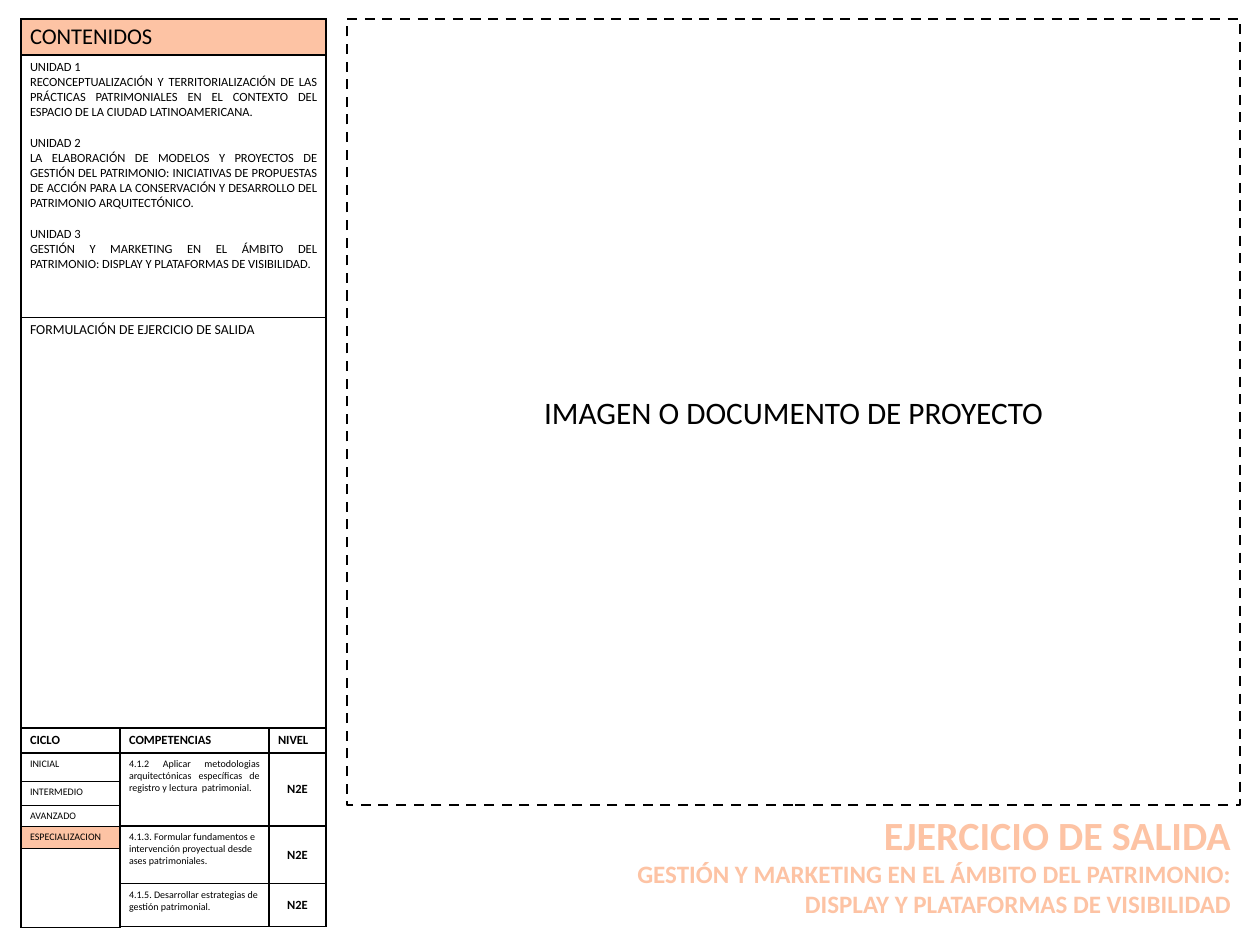
from dataclasses import dataclass

from lxml import etree
from pptx import Presentation
from pptx import util as u
from pptx.dml.color import RGBColor
from pptx.enum import dml, shapes, text
from pptx.oxml import ns

PX = 914400 // 90
INK, PEACH = "000000", "FDC3A4"
LEFT, MID, RIGHT, EVEN = (text.PP_ALIGN.LEFT, text.PP_ALIGN.CENTER,
                          text.PP_ALIGN.RIGHT, text.PP_ALIGN.JUSTIFY)
COLS = [99, 149, 57]
ROWS = [36, 262, 411, 25, 28, 24, 21, 22, 36, 43]


@dataclass
class Line:
    words: str
    size: int
    align: text.PP_ALIGN = EVEN
    bold: bool = False
    gap: float = 0
    ink: str = INK


@dataclass
class Box:
    row: int
    col: int
    lines: list[Line]
    down: int = 1
    wide: int = 1
    fill: str = ""
    middle: bool = False
    thin: str = ""


def px(n: int) -> u.Emu:
    return u.Emu(n * PX)


def rgb(code: str) -> RGBColor:
    return RGBColor.from_string(code)


def write(frame, lines: list[Line]) -> None:
    for i, line in enumerate(lines):
        par = frame.add_paragraph() if i else frame.paragraphs[0]
        par.alignment = line.align
        if line.gap:
            par.space_before = u.Pt(line.gap)
        run = par.add_run()
        run.text = line.words
        style = {"name": "Calibri", "size": u.Pt(line.size), "bold": line.bold}
        for key, value in style.items():
            setattr(run.font, key, value)
        run.font.color.rgb = rgb(line.ink)


def edge(cell, thin: str) -> None:
    """Draw four borders; the sides named in thin are half a point wide."""
    props = cell._tc.get_or_add_tcPr()
    for side in "LRTB":
        width = u.Pt(0.5 if side in thin else 1)
        rule = etree.SubElement(props, ns.qn(f"a:ln{side}"), w=str(width))
        solid = etree.SubElement(rule, ns.qn("a:solidFill"))
        etree.SubElement(solid, ns.qn("a:srgbClr"), val=INK)


def paint(cell, fill: str) -> None:
    if fill:
        cell.fill.solid()
        cell.fill.fore_color.rgb = rgb(fill)
    else:
        cell.fill.background()


def place(table, box: Box) -> None:
    head = table.cell(box.row, box.col)
    if box.down * box.wide > 1:
        head.merge(table.cell(box.row + box.down - 1, box.col + box.wide - 1))
    for row in range(box.row, box.row + box.down):
        for col in range(box.col, box.col + box.wide):
            cell = table.cell(row, col)
            edge(cell, box.thin)
            paint(cell, box.fill)
    if box.middle:
        head.vertical_anchor = text.MSO_ANCHOR.MIDDLE
    write(head.text_frame, box.lines)


UNITS = [
    "RECONCEPTUALIZACIÓN Y TERRITORIALIZACIÓN DE LAS PRÁCTICAS PATRIMONIALES "
    "EN EL CONTEXTO DEL ESPACIO DE LA CIUDAD LATINOAMERICANA.",
    "LA ELABORACIÓN DE MODELOS Y PROYECTOS DE GESTIÓN DEL PATRIMONIO: "
    "INICIATIVAS DE PROPUESTAS DE ACCIÓN PARA LA CONSERVACIÓN Y DESARROLLO "
    "DEL PATRIMONIO ARQUITECTÓNICO.",
    "GESTIÓN Y MARKETING EN EL ÁMBITO DEL PATRIMONIO: DISPLAY Y PLATAFORMAS "
    "DE VISIBILIDAD.",
]
HEADS = ["CICLO", "COMPETENCIAS", "NIVEL"]
STAGES = ["INICIAL", "INTERMEDIO", "AVANZADO", "ESPECIALIZACION"]
SKILLS = [
    (4, 3, EVEN, "4.1.2 Aplicar metodologias arquitectónicas específicas de "
                 "registro y lectura  patrimonial."),
    (7, 2, LEFT, "4.1.3. Formular fundamentos e intervención proyectual desde "
                 "ases patrimoniales."),
    (9, 1, LEFT, "4.1.5. Desarrollar estrategias de gestión patrimonial."),
]


def plan() -> list[Box]:
    """List every cell of the side table."""
    units = []
    for i, words in enumerate(UNITS):
        units += [Line(f"UNIDAD {i + 1}", 10, gap=12.2 if i else 0),
                  Line(words, 10)]
    boxes = [
        Box(0, 0, [Line("CONTENIDOS", 18)], wide=3, fill=PEACH),
        Box(1, 0, units, wide=3, thin="B"),
        Box(2, 0, [Line("FORMULACIÓN DE EJERCICIO DE SALIDA", 11)],
            wide=3, thin="T"),
        Box(8, 0, [], down=2, thin="TB"),
    ]
    boxes += [Box(3, i, [Line(head, 10, bold=True)])
              for i, head in enumerate(HEADS)]
    for i, stage in enumerate(STAGES):
        boxes.append(Box(4 + i, 0, [Line(stage, 8)],
                         fill=PEACH if stage == STAGES[-1] else "",
                         thin="TB" if i else "B"))
    for row, down, align, words in SKILLS:
        boxes += [Box(row, 1, [Line(words, 8, align)], down),
                  Box(row, 2, [Line("N2E", 10, MID, True)], down, middle=True)]
    return boxes


def title(slide) -> None:
    frame = slide.shapes.add_textbox(
        px(573), px(806), px(667), px(118)).text_frame
    frame.word_wrap = True
    write(frame, [
        Line("EJERCICIO DE SALIDA", 32, RIGHT, True, ink=PEACH),
        Line("GESTIÓN Y MARKETING EN EL ÁMBITO DEL PATRIMONIO: "
             "DISPLAY Y PLATAFORMAS DE VISIBILIDAD", 20, RIGHT, True,
             ink=PEACH),
    ])


def panel(slide) -> None:
    shape = slide.shapes.add_shape(shapes.MSO_SHAPE.RECTANGLE,
                                   px(347), px(19), px(893), px(786))
    shape.shadow.inherit = False
    shape.fill.background()
    shape.line.color.rgb = rgb(INK)
    shape.line.width = u.Pt(2)
    shape.line.dash_style = dml.MSO_LINE.DASH
    shape.text_frame.vertical_anchor = text.MSO_ANCHOR.MIDDLE
    write(shape.text_frame, [Line("IMAGEN O DOCUMENTO DE PROYECTO", 25, MID)])


def grid(slide) -> None:
    table = slide.shapes.add_table(len(ROWS), len(COLS), px(21), px(19),
                                   px(sum(COLS)), px(sum(ROWS))).table
    for flag in ("first_row", "horz_banding"):
        setattr(table, flag, False)
    for col, width in zip(table.columns, COLS):
        col.width = px(width)
    for row, height in zip(table.rows, ROWS):
        row.height = px(height)
    for box in plan():
        place(table, box)


def main() -> None:
    deck = Presentation()
    deck.slide_width, deck.slide_height = px(1260), px(945)
    slide = deck.slides.add_slide(deck.slide_layouts[6])
    title(slide)
    panel(slide)
    grid(slide)
    deck.save("out.pptx")


if __name__ == "__main__":
    main()
